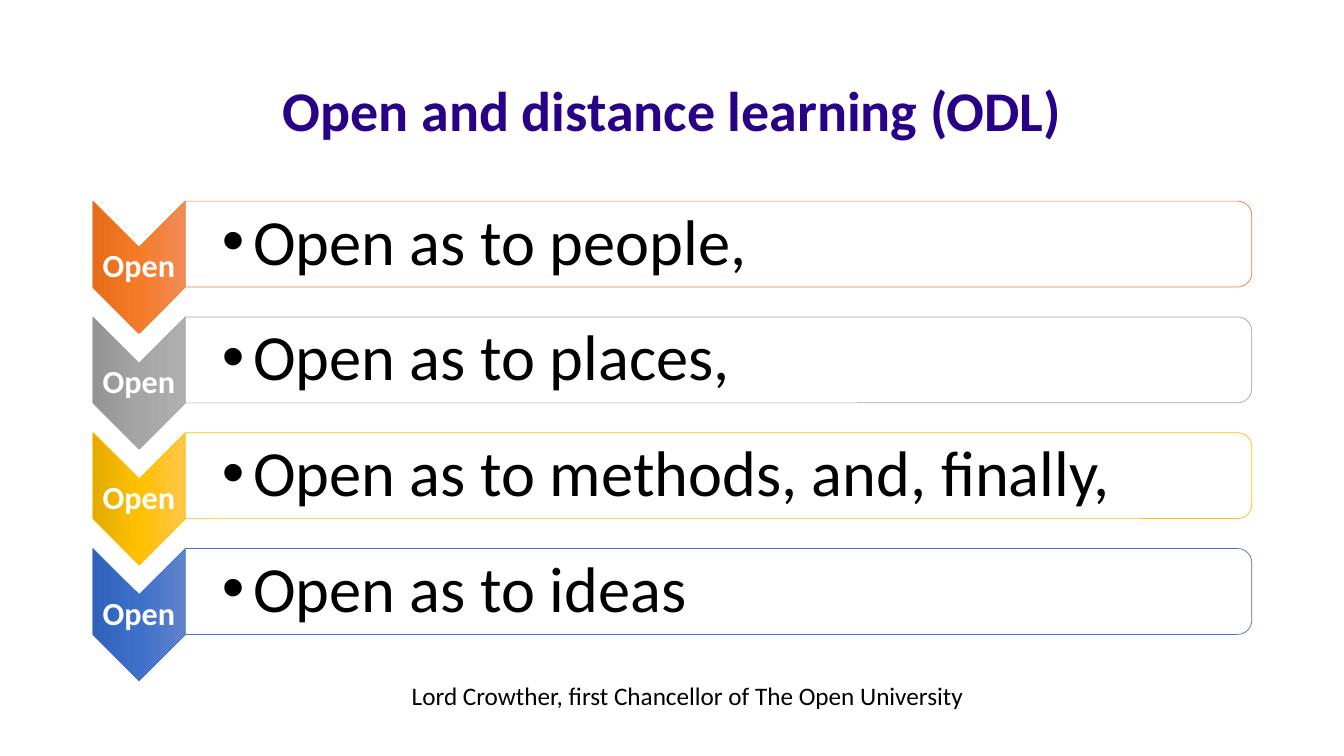
from lxml import etree
from pptx import Presentation
from pptx.dml.color import RGBColor
from pptx.enum import shapes, text
from pptx.oxml import ns
from pptx.util import Pt

TITLE = "Open and distance learning (ODL)"
LABEL = "Open"
CAPTION = "Lord Crowther, first Chancellor of The Open University"
# Statement, line colour, gradient from top to bottom
ROWS = [
    ("Open as to people,", RGBColor(0xED, 0x7D, 0x31), ("F18C57", "F67B28", "E56C19")),
    ("Open as to places,", RGBColor(0xA5, 0xA5, 0xA5), ("AFAFAF", "A5A5A5", "939393")),
    ("Open as to methods, and, finally,", RGBColor(0xFF, 0xC0, 0x00), ("FFC64B", "FFC000", "E3AB00")),
    ("Open as to ideas", RGBColor(0x44, 0x72, 0xC4), ("6183CB", "3E70CA", "3062BB")),
]

INDIGO = RGBColor(0x29, 0x00, 0x88)
WHITE = RGBColor(0xFF, 0xFF, 0xFF)
BLACK = RGBColor(0x00, 0x00, 0x00)
FONT = "Calibri"

# Layout in points
LEFT, TOP, PITCH = 66.2, 143.7, 82.7
CHEVRON_WIDTH, CHEVRON_HEIGHT = 66.2, 94.5
BAR_WIDTH, BAR_HEIGHT = 761.8, 61.4
BAR_LEFT = LEFT + CHEVRON_WIDTH


def add_run(paragraph, words, size, color, bold=False):
    run = paragraph.add_run()
    run.text = words
    run.font.name, run.font.size, run.font.bold = FONT, Pt(size), bold
    run.font.color.rgb = color


def add_text(left, top, width, height, margins):
    frame = slide.shapes.add_textbox(Pt(left), Pt(top), Pt(width), Pt(height)).text_frame
    frame.word_wrap = True
    frame.vertical_anchor = text.MSO_ANCHOR.MIDDLE
    frame.margin_left, frame.margin_top, frame.margin_right, frame.margin_bottom = map(Pt, margins)
    return frame.paragraphs[0]


def add_turned(kind, left, top, width, height, line_color):
    """Add a shape turned by 90 degrees that covers the given area."""
    x, y = left + (width - height) / 2, top + (height - width) / 2
    shape = slide.shapes.add_shape(kind, Pt(x), Pt(y), Pt(height), Pt(width))
    shape.rotation = 90
    shape.shadow.inherit = False
    shape.line.color.rgb = line_color
    shape.line.width = Pt(0.5)
    return shape


def fill_gradient(shape, colors):
    shape.fill.gradient()
    shape.fill.gradient_angle = 270
    stops = shape._element.spPr.find(".//" + ns.qn("a:gsLst"))
    for stop in list(stops):
        stops.remove(stop)
    for index, color in enumerate(colors):
        stop = etree.SubElement(stops, ns.qn("a:gs"), pos=str(index * 50000))
        etree.SubElement(stop, ns.qn("a:srgbClr"), val=color)


def add_bullet(paragraph, indent):
    properties = paragraph._p.get_or_add_pPr()
    properties.set("marL", str(Pt(indent)))
    properties.set("indent", str(-Pt(indent)))
    etree.SubElement(properties, ns.qn("a:buFont"), typeface="Arial")
    etree.SubElement(properties, ns.qn("a:buChar"), char="•")


presentation = Presentation()
presentation.slide_width, presentation.slide_height = Pt(960), Pt(540)
slide = presentation.slides.add_slide(presentation.slide_layouts[5])

# Title
title = slide.shapes.title
title.left, title.top, title.width, title.height = Pt(66), Pt(28.75), Pt(828), Pt(104.4)
title.text_frame.auto_size = text.MSO_AUTO_SIZE.NONE
title.text_frame.vertical_anchor = text.MSO_ANCHOR.MIDDLE
heading = title.text_frame.paragraphs[0]
heading.alignment = text.PP_ALIGN.CENTER
heading.line_spacing = 0.9
add_run(heading, TITLE, 40, INDIGO, bold=True)

# Chevrons with their statements
for index, (statement, line_color, gradient) in enumerate(ROWS):
    top = TOP + index * PITCH

    chevron = add_turned(shapes.MSO_SHAPE.CHEVRON, LEFT, top,
                         CHEVRON_WIDTH, CHEVRON_HEIGHT, line_color)
    fill_gradient(chevron, gradient)
    label = add_text(LEFT, top + CHEVRON_WIDTH / 2, CHEVRON_WIDTH,
                     CHEVRON_HEIGHT - CHEVRON_WIDTH, (1.2, 1.2, 1.2, 1.2))
    label.alignment = text.PP_ALIGN.CENTER
    label.line_spacing = 0.9
    add_run(label, LABEL, 23, WHITE, bold=True)

    bar = add_turned(shapes.MSO_SHAPE.ROUND_2_SAME_RECTANGLE, BAR_LEFT, top,
                     BAR_WIDTH, BAR_HEIGHT, line_color)
    bar.fill.solid()
    bar.fill.fore_color.rgb = WHITE
    item = add_text(BAR_LEFT, top + 3, BAR_WIDTH - 3, BAR_HEIGHT - 6, (26, 2.3, 2.3, 2.3))
    item.line_spacing = 0.9
    add_bullet(item, 22.5)
    add_run(item, statement, 46, BLACK)

# Attribution
caption = add_text(287, 482.4, 480, 29, (7.2, 3.6, 7.2, 3.6))
add_run(caption, CAPTION, 18, BLACK)

presentation.save("out.pptx")
